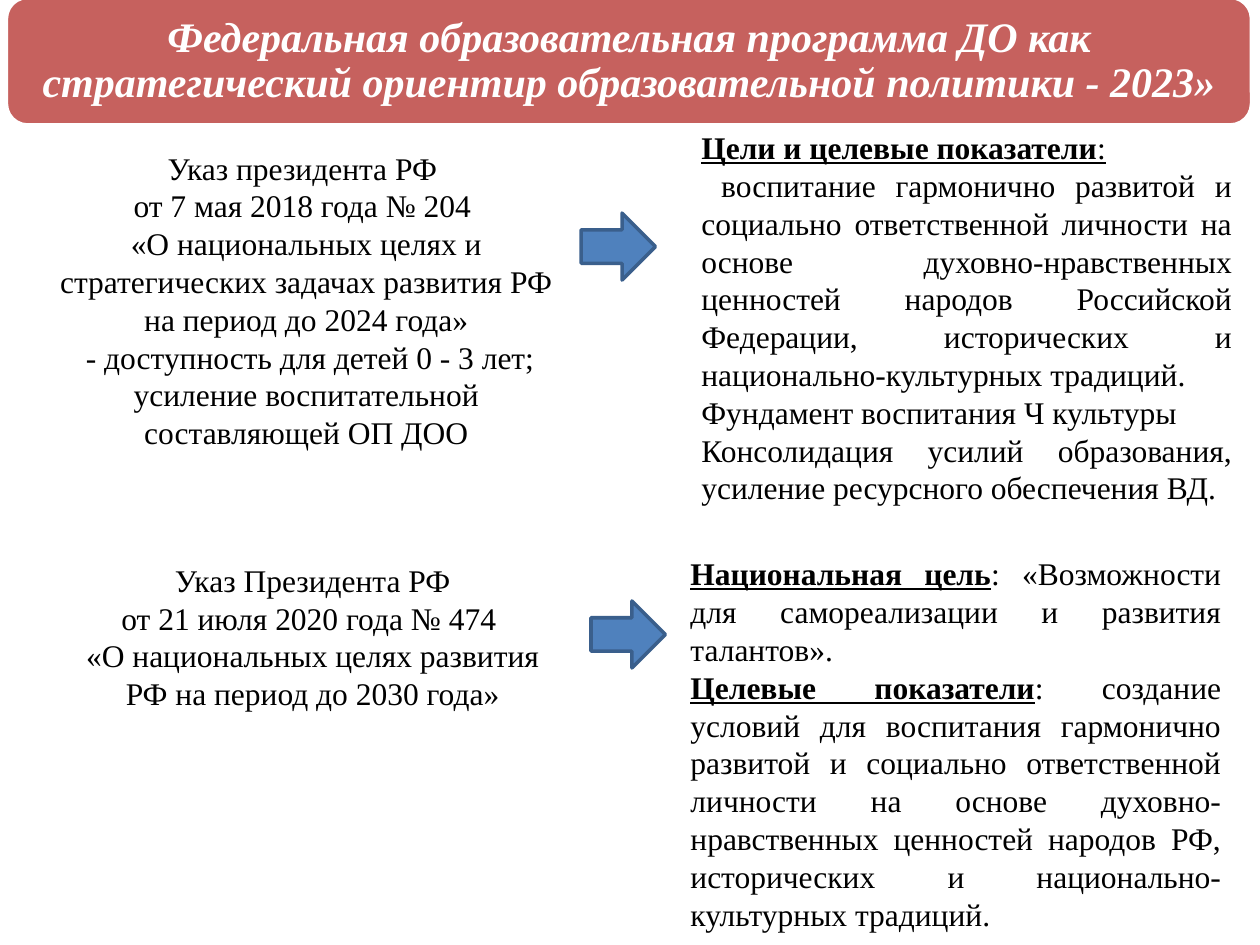
import pptx
import pptx.dml.color
import pptx.enum.shapes
import pptx.enum.text
import pptx.oxml.ns
import pptx.util
from lxml import etree

Cm = pptx.util.Cm
Pt = pptx.util.Pt
ALIGN = pptx.enum.text.PP_ALIGN
SHAPE = pptx.enum.shapes.MSO_SHAPE
COLORS = {"banner": "C0504D", "white": "FFFFFF", "black": "000000",
          "arrow": "4F81BD", "arrow_line": "3A5F8C"}
BODY = {"name": "Times New Roman", "size": Pt(18)}
HEADING = {**BODY, "bold": True, "underline": True}
TITLE = {"name": "Times New Roman", "size": Pt(24), "bold": True, "italic": True}


def add_span(para, text, style, color):
    span = para.add_run()
    span.text = text
    for name, value in style.items():
        setattr(span.font, name, value)
    span.font.color.rgb = pptx.dml.color.RGBColor.from_string(COLORS[color])


def add_filled_shape(page, kind, frame, fill, line):
    shape = page.shapes.add_shape(kind, *(Cm(length) for length in frame))
    shape.shadow.inherit = False
    shape.fill.solid()
    shape.fill.fore_color.rgb = pptx.dml.color.RGBColor.from_string(COLORS[fill])
    shape.line.color.rgb = pptx.dml.color.RGBColor.from_string(COLORS[line])
    shape.line.width = Pt(2)
    return shape


deck = pptx.Presentation()
deck.slide_width, deck.slide_height = Cm(25.4), Cm(19.05)
page = deck.slides.add_slide(deck.slide_layouts[6])

# Title banner, slightly see-through
banner = add_filled_shape(page, SHAPE.ROUNDED_RECTANGLE,
                          (0.13, -0.05, 25.1, 2.57), "banner", "white")
fill_color = banner.fill._xPr.find(".//" + pptx.oxml.ns.qn("a:srgbClr"))
etree.SubElement(fill_color, pptx.oxml.ns.qn("a:alpha"), val="90000")
frame_format = {"word_wrap": True, "vertical_anchor": pptx.enum.text.MSO_ANCHOR.MIDDLE,
                "margin_left": Cm(0.25), "margin_right": Cm(0.25),
                "margin_top": Cm(0.25), "margin_bottom": Cm(0.25)}
for name, value in frame_format.items():
    setattr(banner.text_frame, name, value)
title = banner.text_frame.paragraphs[0]
title.alignment = ALIGN.CENTER
title.line_spacing = 0.9
add_span(title, "Федеральная образовательная программа ДО как стратегический "
         "ориентир образовательной политики - 2023»", TITLE, "white")

# Arrows from each decree to its goals
for left, top in [(11.79, 4.22), (11.99, 12.04)]:
    arrow = add_filled_shape(page, SHAPE.DOWN_ARROW, (left, top, 1.35, 1.5),
                             "arrow", "arrow_line")
    arrow.rotation = 270

# Each block: frame, then paragraphs of (alignment, spans)
blocks = [
    ((0.84, 2.87, 10.67, 6.4), [
        (ALIGN.CENTER, [("Указ президента РФ ", BODY)]),
        (ALIGN.CENTER, [("от 7 мая 2018 года № 204 ", BODY)]),
        (ALIGN.CENTER, [("«О национальных целях и стратегических задачах развития РФ "
                         "на период до 2024 года»", BODY)]),
        (ALIGN.CENTER, [(" - доступность для детей 0 - 3 лет; усиление "
                         "воспитательной составляющей ОП ДОО", BODY)]),
    ]),
    ((1.3, 11.18, 10.01, 4.11), [
        (ALIGN.CENTER, [("Указ Президента РФ", BODY)]),
        (ALIGN.CENTER, [("от 21 июля 2020 года № 474 ", BODY)]),
        (ALIGN.CENTER, [("«О национальных целях развития РФ на период "
                         "до 2030 года»", BODY)]),
    ]),
    ((13.89, 2.46, 11.2, 7.95), [
        (ALIGN.LEFT, [("Цели и целевые показатели", HEADING),
                      (":", {**BODY, "underline": True})]),
        (ALIGN.JUSTIFY, [(" воспитание гармонично развитой и социально ответственной "
                          "личности на основе духовно-нравственных ценностей народов "
                          "Российской Федерации, исторических и национально-культурных "
                          "традиций. ", BODY)]),
        (ALIGN.JUSTIFY, [("Фундамент воспитания Ч культуры", BODY)]),
        (ALIGN.JUSTIFY, [("Консолидация усилий образования, усиление ресурсного "
                          "обеспечения ВД.", BODY)]),
    ]),
    ((13.67, 11.05, 11.2, 7.95), [
        (ALIGN.JUSTIFY, [("Национальная цель", HEADING),
                         (": «Возможности для самореализации и развития талантов».", BODY)]),
        (ALIGN.JUSTIFY, [("Целевые показатели", HEADING),
                         (": создание условий для воспитания гармонично развитой и "
                          "социально ответственной личности на основе "
                          "духовно-нравственных ценностей народов РФ, исторических и "
                          "национально-культурных традиций.", BODY)]),
    ]),
]
for frame, paragraphs in blocks:
    box = page.shapes.add_textbox(*(Cm(length) for length in frame))
    box.text_frame.word_wrap = True
    box.text_frame.auto_size = pptx.enum.text.MSO_AUTO_SIZE.SHAPE_TO_FIT_TEXT
    for index, (alignment, spans) in enumerate(paragraphs):
        para = box.text_frame.add_paragraph() if index else box.text_frame.paragraphs[0]
        para.alignment = alignment
        for text, style in spans:
            add_span(para, text, style, "black")

deck.save("out.pptx")
